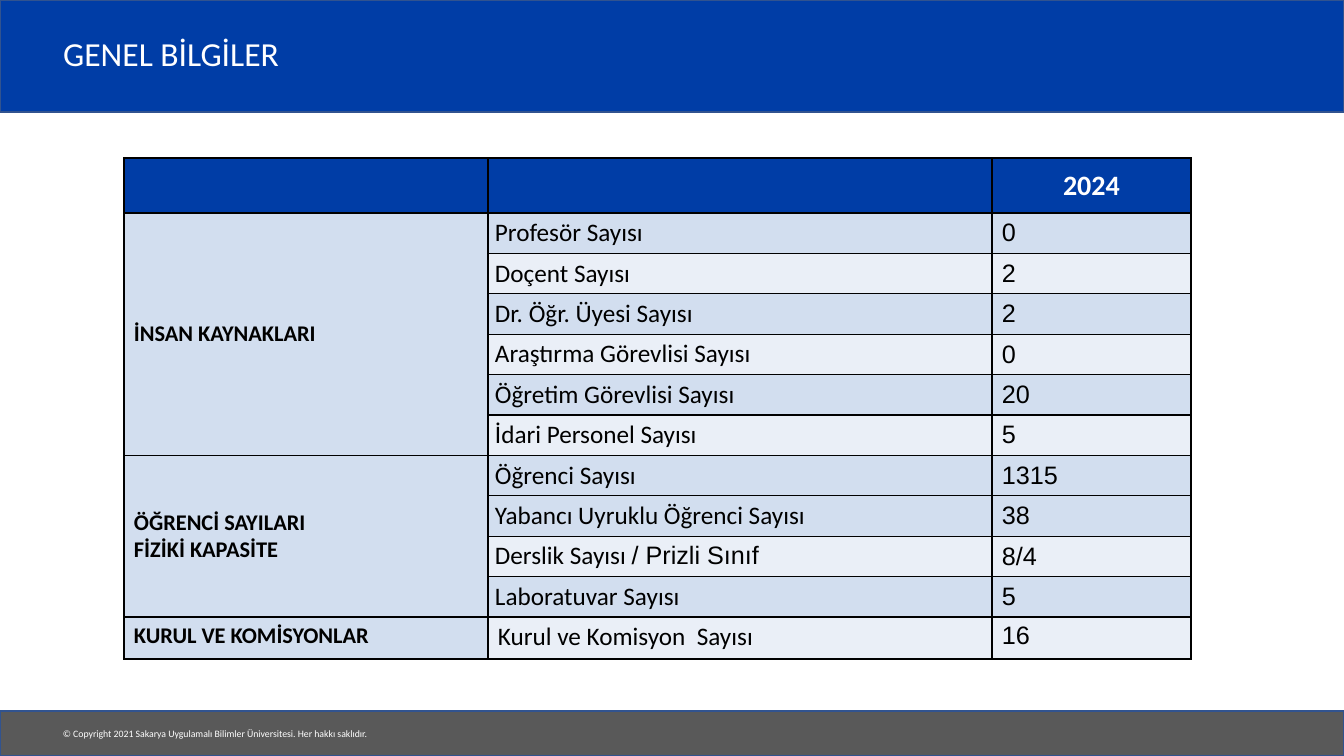
from lxml.etree import SubElement
from pptx import Presentation
from pptx.dml.color import RGBColor
from pptx.enum.shapes import MSO_SHAPE as Shape
from pptx.enum.text import MSO_ANCHOR as Anchor, PP_ALIGN as Align
from pptx.oxml.ns import qn
from pptx.util import Emu, Pt

TITLE = "GENEL BİLGİLER"
COPYRIGHT = "© Copyright 2021 Sakarya Uygulamalı Bilimler Üniversitesi. Her hakkı saklıdır."
YEAR = "2024"
GROUPS = [
    ("İNSAN KAYNAKLARI", [
        (["Profesör Sayısı"], "0", "dark"),
        (["Doçent Sayısı"], "2", "light"),
        (["Dr. Öğr. Üyesi Sayısı"], "2", "dark"),
        (["Araştırma Görevlisi Sayısı"], "0", "light"),
        (["Öğretim Görevlisi Sayısı"], "20", "dark"),
        (["İdari Personel Sayısı"], "5", "light"),
    ]),
    ("ÖĞRENCİ SAYILARI\vFİZİKİ KAPASİTE", [
        (["Öğrenci Sayısı"], "1315", "dark"),
        (["Yabancı Uyruklu Öğrenci Sayısı"], "38", "dark"),
        (["Derslik Sayısı ", "/ Prizli Sınıf"], "8/4", "light"),
        (["Laboratuvar Sayısı"], "5", "dark"),
    ]),
    ("KURUL VE KOMİSYONLAR", [
        (["Kurul ve Komisyon  Sayısı"], "16", "light"),
    ]),
]
COLORS = {
    "blue": "003DA6", "gray": "595959", "edge": "31538F", "white": "FFFFFF",
    "black": "000000", "dark": "D2DEEF", "light": "EAEFF7",
}
PX = 914400 / 100.8
WIDTH, HEIGHT = 1344, 756
COLUMNS = [364, 504, 199]
HEADER_ROW, BODY_ROWS, LAST_ROW = 55, 404, 42
WIDE, TIGHT = (10, 5), (7, 0)


def px(value):
    return Emu(round(value * PX))


def color(name):
    return RGBColor.from_string(COLORS[name])


def set_font(span, size, tone, face="Calibri", bold=False):
    span.font.size = Pt(size)
    span.font.name = face
    span.font.bold = bold
    span.font.color.rgb = color(tone)


def add_band(page, top, height, tone):
    band = page.shapes.add_shape(Shape.RECTANGLE, 0, px(top), px(WIDTH), px(height))
    band.shadow.inherit = False
    band.fill.solid()
    band.fill.fore_color.rgb = color(tone)
    band.line.color.rgb = color("edge")
    band.line.width = Pt(1)


def style_cell(cell, tone, inset=WIDE, anchor=Anchor.MIDDLE):
    props = cell._tc.get_or_add_tcPr()
    for side in ("lnL", "lnR", "lnT", "lnB"):
        line = SubElement(props, qn(f"a:{side}"), w=str(Pt(1)))
        fill = SubElement(line, qn("a:solidFill"))
        SubElement(fill, qn("a:srgbClr"), val=COLORS["black"])
    cell.fill.solid()
    cell.fill.fore_color.rgb = color(tone)
    cell.vertical_anchor = anchor
    cell.margin_left = cell.margin_right = px(inset[0])
    cell.margin_top = cell.margin_bottom = px(inset[1])


def write_cell(cell, text, size, tone="black", face="Calibri", bold=False, align=Align.LEFT):
    cell.text_frame.text = text
    para = cell.text_frame.paragraphs[0]
    para.alignment = align
    for span in para.runs:
        set_font(span, size, tone, face, bold)
    return para


def add_table(page):
    count = sum(len(rows) for _, rows in GROUPS)
    total = HEADER_ROW + BODY_ROWS + LAST_ROW
    frame = page.shapes.add_table(count + 1, 3, px(124), px(158), px(sum(COLUMNS)), px(total))
    table = frame.table
    table.first_row = table.horz_banding = False
    for column, width in zip(table.columns, COLUMNS):
        column.width = px(width)
    heights = [HEADER_ROW] + [BODY_ROWS / (count - 1)] * (count - 1) + [LAST_ROW]
    for row, height in zip(table.rows, heights):
        row.height = px(height)

    for index in range(3):
        style_cell(table.cell(0, index), "blue")
    write_cell(table.cell(0, 2), YEAR, 20, "white", bold=True, align=Align.CENTER)

    start = 1
    for heading, rows in GROUPS:
        single = len(rows) == 1
        anchor = Anchor.TOP if single else Anchor.MIDDLE
        for row, (labels, value, tone) in enumerate(rows, start):
            group, label, amount = (table.cell(row, index) for index in range(3))
            style_cell(group, "dark", anchor=anchor)
            style_cell(label, tone, WIDE if single else TIGHT, anchor)
            style_cell(amount, tone, anchor=anchor)
            para = write_cell(label, labels[0], 18, align=Align.JUSTIFY)
            for extra in labels[1:]:
                span = para.add_run()
                span.text = extra
                set_font(span, 18, "black", "Arial")
            write_cell(amount, value, 18, face="Arial")
        write_cell(table.cell(start, 0), heading, 16, bold=True)
        if not single:
            table.cell(start, 0).merge(table.cell(start + len(rows) - 1, 0))
        start += len(rows)


def add_footer(page):
    box = page.shapes.add_textbox(px(53), px(723), px(332), px(22))
    box.text_frame.text = COPYRIGHT
    set_font(box.text_frame.paragraphs[0].runs[0], 7, "white")


def place_title(page):
    title = page.shapes.title
    page.shapes._spTree.append(title._element)
    title.left, title.top, title.width, title.height = map(px, (53, 19, 1112, 74))
    title.text_frame.text = TITLE
    title.text_frame.vertical_anchor = Anchor.MIDDLE
    para = title.text_frame.paragraphs[0]
    para.alignment = Align.LEFT
    para.line_spacing = 0.9
    set_font(para.runs[0], 24, "white")


def main():
    deck = Presentation()
    deck.slide_width, deck.slide_height = px(WIDTH), px(HEIGHT)
    page = deck.slides.add_slide(deck.slide_layouts[5])
    add_band(page, 0, 112, "blue")
    add_band(page, 711, 45, "gray")
    add_footer(page)
    add_table(page)
    place_title(page)
    deck.save("out.pptx")


if __name__ == "__main__":
    main()
